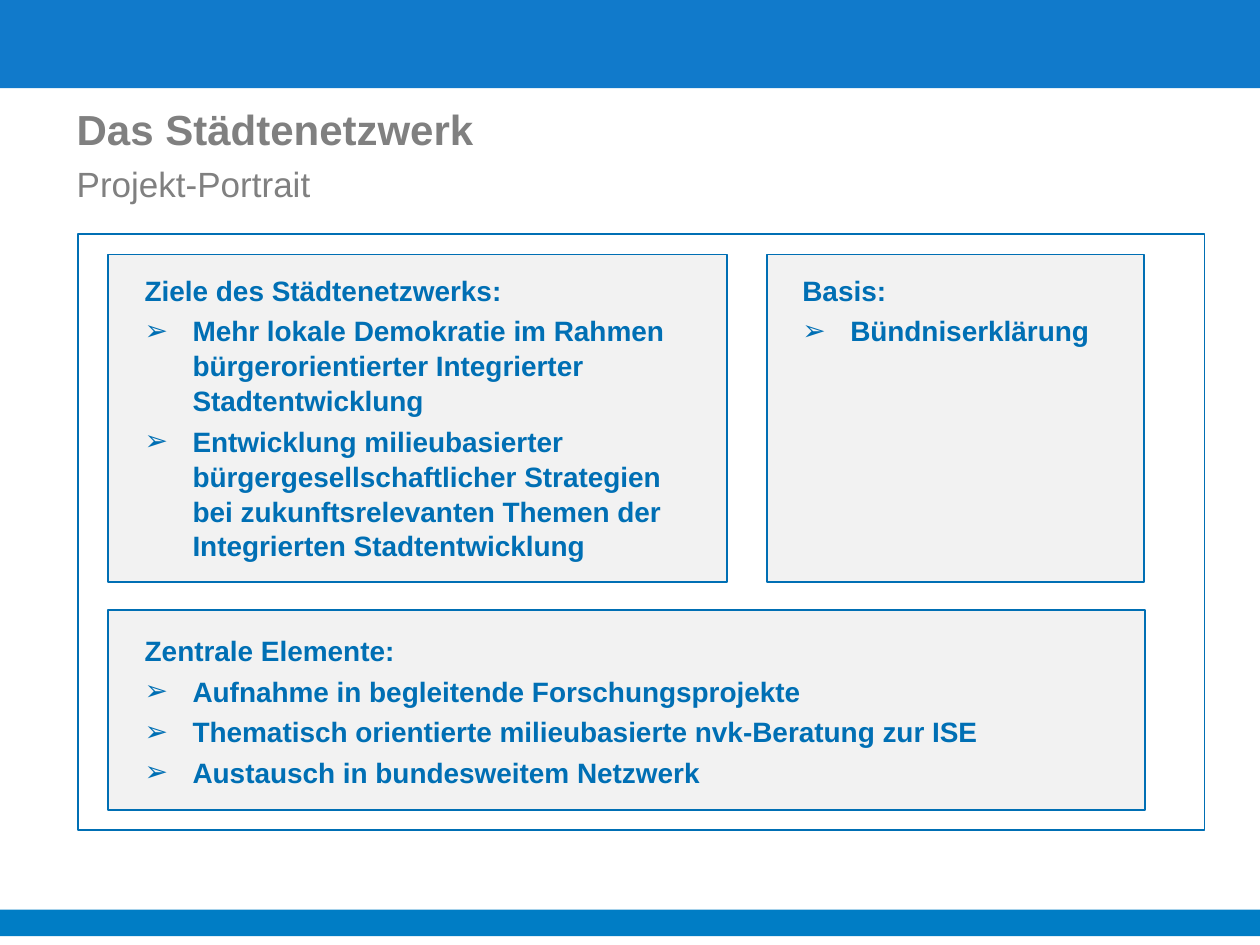
from dataclasses import dataclass

import pptx
import pptx.dml.color
import pptx.enum.shapes
import pptx.oxml
import pptx.oxml.ns
import pptx.util

Inches = pptx.util.Inches
Pt = pptx.util.Pt


@dataclass(frozen=True)
class Theme:
    font: str = "Arial"
    header: str = "117ACB"
    footer: str = "007DC5"
    accent: str = "006FB4"
    panel: str = "F2F2F2"
    heading: str = "808080"
    title_size: float = 24
    subtitle_size: float = 20
    body_size: float = 16
    outline: float = 1
    line_spacing: float = 1.04
    indent: float = 0.38


@dataclass(frozen=True)
class Box:
    left: float
    top: float
    width: float
    height: float

    def lengths(self) -> tuple:
        return tuple(Inches(v) for v in (self.left, self.top, self.width, self.height))


@dataclass(frozen=True)
class Line:
    text: str
    size: float
    color: str
    bold: bool = True
    bullet: str = ""
    space_before: float = 0


@dataclass(frozen=True)
class Panel:
    frame: Box
    text_area: Box
    heading: str
    points: tuple


THEME = Theme()


def rgb(value: str):
    return pptx.dml.color.RGBColor.from_string(value)


def add_rectangle(slide, box: Box, fill: str = "", line: str = "") -> None:
    rectangle = slide.shapes.add_shape(
        pptx.enum.shapes.MSO_SHAPE.RECTANGLE, *box.lengths())
    rectangle.shadow.inherit = False
    if fill:
        rectangle.fill.solid()
        rectangle.fill.fore_color.rgb = rgb(fill)
    else:
        rectangle.fill.background()
    if line:
        rectangle.line.color.rgb = rgb(line)
        rectangle.line.width = Pt(THEME.outline)
    else:
        rectangle.line.fill.background()


def indent_paragraph(paragraph, bullet: str) -> None:
    properties = paragraph._p.get_or_add_pPr()
    properties.set("marL", str(Inches(THEME.indent)))
    properties.set("indent", str(-Inches(THEME.indent)))
    if bullet:
        namespace = pptx.oxml.ns.nsdecls("a")
        for tag in (f'<a:buFont {namespace} typeface="{THEME.font}"/>',
                    f'<a:buChar {namespace} char="{bullet}"/>'):
            properties.append(pptx.oxml.parse_xml(tag))


def add_text(slide, box: Box, lines: list[Line]) -> None:
    frame = slide.shapes.add_textbox(*box.lengths()).text_frame
    frame.word_wrap = True
    for index, line in enumerate(lines):
        paragraph = frame.add_paragraph() if index else frame.paragraphs[0]
        paragraph.text = line.text
        indent_paragraph(paragraph, line.bullet)
        paragraph.line_spacing = THEME.line_spacing
        paragraph.space_before = Pt(line.space_before)
        font_format = {"name": THEME.font, "size": Pt(line.size), "bold": line.bold}
        for run in paragraph.runs:
            for attribute, value in font_format.items():
                setattr(run.font, attribute, value)
            run.font.color.rgb = rgb(line.color)


def add_panel(slide, panel: Panel) -> None:
    add_rectangle(slide, panel.frame, THEME.panel, THEME.accent)
    heading = Line(panel.heading, THEME.body_size, THEME.accent)
    points = [Line(point, THEME.body_size, THEME.accent, bullet="➢",
                   space_before=0.2 * THEME.body_size)
              for point in panel.points]
    add_text(slide, panel.text_area, [heading, *points])


PANELS = (
    Panel(Box(0.86, 2.02, 4.91, 2.6), Box(1.05, 2.11, 4.57, 0.86),
          "Ziele des Städtenetzwerks:",
          ("Mehr lokale Demokratie im Rahmen bürgerorientierter Integrierter "
           "Stadtentwicklung",
           "Entwicklung milieubasierter bürgergesellschaftlicher Strategien\n"
           "bei zukunftsrelevanten Themen der Integrierten Stadtentwicklung")),
    Panel(Box(0.86, 4.84, 8.23, 1.59), Box(1.05, 4.97, 7.88, 0.86),
          "Zentrale Elemente:",
          ("Aufnahme in begleitende Forschungsprojekte",
           "Thematisch orientierte milieubasierte nvk-Beratung zur ISE",
           "Austausch in bundesweitem Netzwerk")),
    Panel(Box(6.09, 2.02, 2.99, 2.6), Box(6.27, 2.11, 2.63, 0.86),
          "Basis:", ("Bündniserklärung",)),
)


def main() -> None:
    presentation = pptx.Presentation()
    presentation.slide_width = Inches(10)
    presentation.slide_height = Inches(7.5)
    slide = presentation.slides.add_slide(presentation.slide_layouts[6])

    # Header and footer bands
    add_rectangle(slide, Box(0, 0, 10, 0.7), THEME.header)
    add_rectangle(slide, Box(0, 7.22, 10, 0.21), THEME.footer)

    # Title and subtitle
    add_text(slide, Box(0.51, 0.76, 6.72, 0.95), [
        Line("Das Städtenetzwerk", THEME.title_size, THEME.heading),
        Line("Projekt-Portrait", THEME.subtitle_size, THEME.heading, bold=False,
             space_before=0.2 * THEME.subtitle_size),
    ])

    # Outer frame with its three panels
    add_rectangle(slide, Box(0.62, 1.86, 8.94, 4.73), line=THEME.accent)
    for panel in PANELS:
        add_panel(slide, panel)

    presentation.save("out.pptx")


if __name__ == "__main__":
    main()
